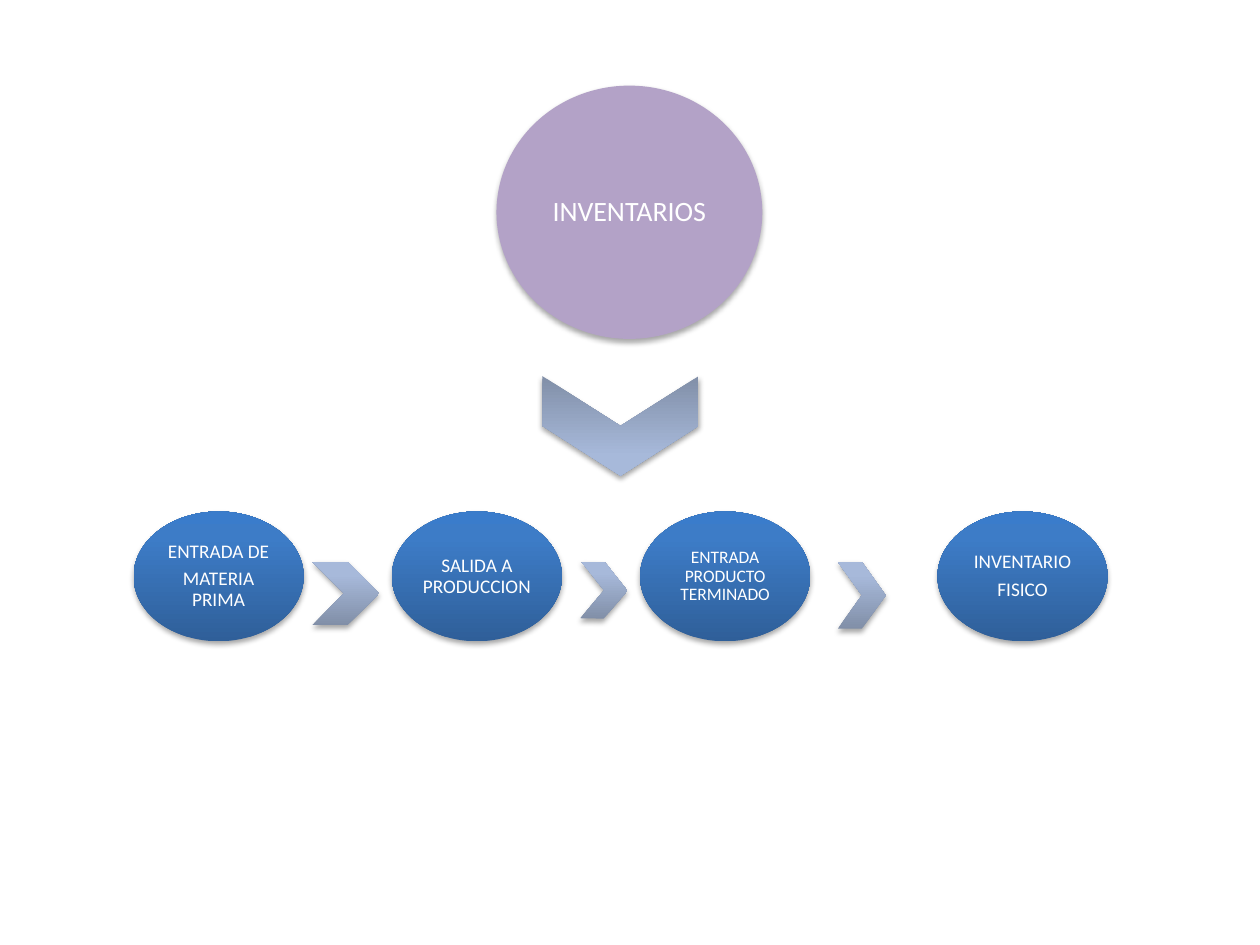
from dataclasses import dataclass

from lxml import etree
from pptx import Presentation
from pptx import util as u
from pptx.dml.color import RGBColor
from pptx.enum import shapes, text
from pptx.oxml import ns


@dataclass(frozen=True)
class Theme:
    font: str = "Calibri"
    text_color: str = "FFFFFF"
    root_fill: str = "B3A2C7"
    step_stops: tuple = ((0, "2F5F99"), (80, "3D7CC7"), (100, "3A7CCB"))
    arrow_stops: tuple = ((0, "818FA8"), (80, "A7B9DA"), (100, "A7BADC"))
    shadow_color: str = "000000"
    root_size: int = 16
    step_size: int = 11
    small_size: int = 10


THEME = Theme()
STEP_TOP, STEP_WIDTH, STEP_HEIGHT = 4.06, 1.35, 1.03
ARROW_TOP = 4.46

# Left edge, paragraphs, type size
STEPS = [
    (1.06, ["ENTRADA DE", "MATERIA PRIMA"], THEME.step_size),
    (3.11, ["SALIDA A PRODUCCION"], THEME.step_size),
    (5.08, ["ENTRADA PRODUCTO TERMINADO"], THEME.small_size),
    (7.44, ["INVENTARIO", "FISICO"], THEME.step_size),
]
# Left edge, width, height, rotation
STEP_ARROWS = [(2.48, 0.53, 0.5, 0), (4.61, 0.37, 0.45, 1), (6.65, 0.38, 0.53, 0)]


def add_child(parent, tag, **attributes):
    child = etree.SubElement(parent, ns.qn(tag))
    for name, value in attributes.items():
        child.set(name, str(value))
    return child


def add_color(parent, color):
    return add_child(parent, "a:srgbClr", val=color)


def set_gradient(shape, stops):
    """Run the stops from the bottom to the top of the shape."""
    gradient = etree.Element(ns.qn("a:gradFill"), rotWithShape="0")
    stop_list = add_child(gradient, "a:gsLst")
    for position, color in stops:
        add_color(add_child(stop_list, "a:gs", pos=position * 1000), color)
    add_child(gradient, "a:lin", ang=270 * 60000, scaled=0)
    shape._element.spPr.find(ns.qn("a:prstGeom")).addnext(gradient)


def set_shadow(shape):
    shape.shadow.inherit = False
    effects = shape._element.spPr.find(ns.qn("a:effectLst"))
    shadow = add_child(effects, "a:outerShdw", blurRad=u.Pt(3.1), dist=u.Pt(1.8),
                       dir=90 * 60000, rotWithShape=0)
    add_child(add_color(shadow, THEME.shadow_color), "a:alpha", val=35000)


def add_form(slide, preset, left, top, width, height):
    form = slide.shapes.add_shape(preset, u.Inches(left), u.Inches(top),
                                  u.Inches(width), u.Inches(height))
    form.line.fill.background()
    set_shadow(form)
    return form


def add_oval(slide, left, top, width, height, lines, size):
    oval = add_form(slide, shapes.MSO_SHAPE.OVAL, left, top, width, height)
    frame = oval.text_frame
    frame.text = "\n".join(lines)
    frame.word_wrap = True
    frame.vertical_anchor = text.MSO_ANCHOR.MIDDLE
    frame.margin_left = frame.margin_right = u.Inches(0.02)
    frame.margin_top = frame.margin_bottom = u.Inches(0.02)
    for paragraph in frame.paragraphs:
        paragraph.alignment = text.PP_ALIGN.CENTER
        paragraph.line_spacing = 0.9
        paragraph.space_after = u.Pt(round(size * 0.35, 1))
        for run in paragraph.runs:
            run.font.name = THEME.font
            run.font.size = u.Pt(size)
            run.font.color.rgb = RGBColor.from_string(THEME.text_color)
    return oval


def add_arrow(slide, left, top, width, height, rotation=0):
    arrow = add_form(slide, shapes.MSO_SHAPE.CHEVRON, left, top, width, height)
    arrow.rotation = rotation
    set_gradient(arrow, THEME.arrow_stops)
    return arrow


def main():
    deck = Presentation()
    deck.slide_width, deck.slide_height = u.Inches(10), u.Inches(7.5)
    slide = deck.slides.add_slide(deck.slide_layouts[6])

    # Main topic
    topic = add_oval(slide, 3.94, 0.68, 2.11, 2.01, ["INVENTARIOS"], THEME.root_size)
    topic.fill.solid()
    topic.fill.fore_color.rgb = RGBColor.from_string(THEME.root_fill)

    # Arrow down to the process, mirrored so its dark end is on top
    down_arrow = add_arrow(slide, 4.53, 2.76, 0.79, 1.24, 90)
    down_arrow._element.spPr.find(ns.qn("a:xfrm")).set("flipV", "1")

    # Process steps
    for left, lines, size in STEPS:
        step = add_oval(slide, left, STEP_TOP, STEP_WIDTH, STEP_HEIGHT, lines, size)
        set_gradient(step, THEME.step_stops)

    # Arrows between the steps
    for left, width, height, rotation in STEP_ARROWS:
        add_arrow(slide, left, ARROW_TOP, width, height, rotation)

    deck.save("out.pptx")


if __name__ == "__main__":
    main()
